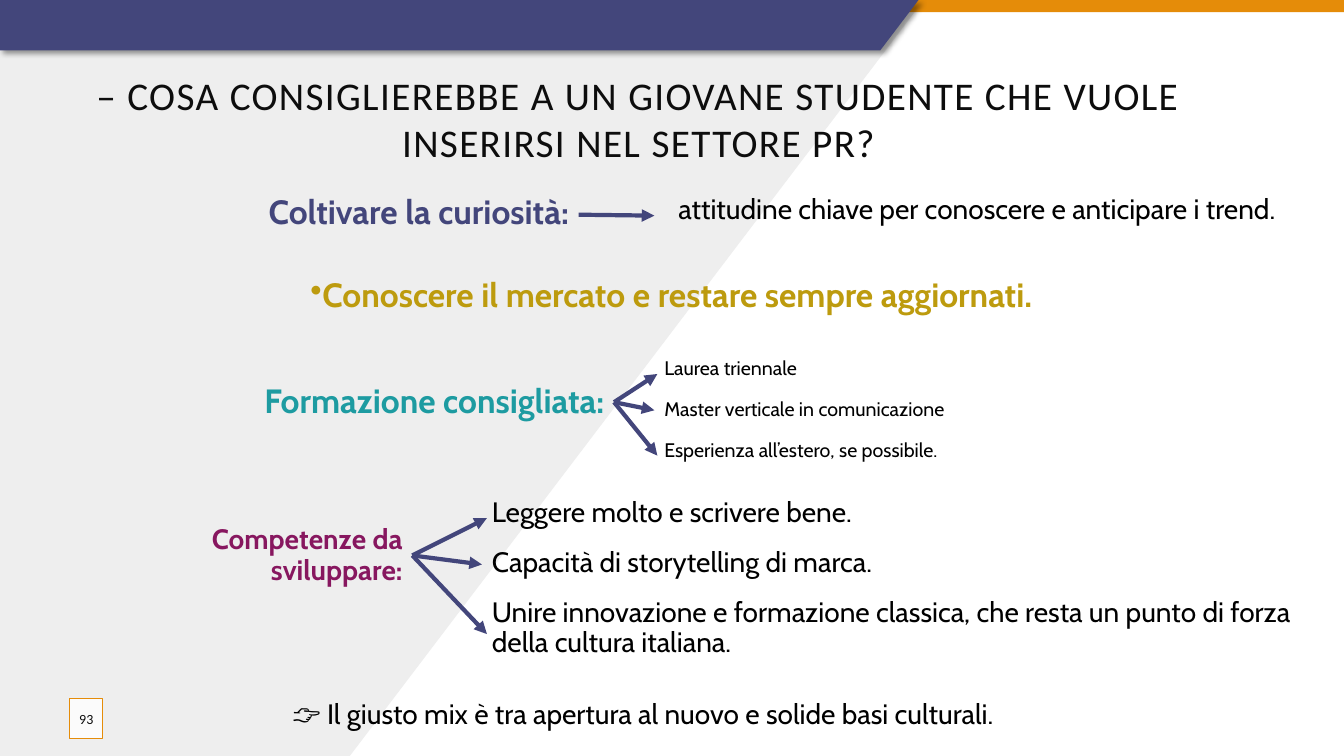
from lxml.etree import SubElement as Sub
from pptx import Presentation
from pptx.dml.color import RGBColor as RGB
from pptx.enum.shapes import MSO_CONNECTOR as Conn, MSO_SHAPE as Kind
from pptx.enum.text import MSO_ANCHOR as Anchor, PP_ALIGN as Align
from pptx.oxml.ns import qn
from pptx.util import Inches, Pt

WIDE, HIGH = Inches(13.33), Inches(7.5)
HUES = {
    "paper": "FFFFFF", "grey": "EEEEEE", "orange": "E58C09", "navy": "43467B",
    "ink": "0D0D0D", "black": "000000", "teal": "1D9BA1", "plum": "87175F",
    "gold": "BD9B0E",
}
BODY = {"line_spacing": 0.9, "space_after": Pt(2)}
HEAD = {**BODY, "alignment": Align.RIGHT}
MID = {"alignment": Align.CENTER}


def col(share):
    return round(WIDE * share / 100)


def row(share):
    return round(HIGH * share / 100)


def area(left, top, width, height):
    return col(left), row(top), col(width), row(height)


def apply(item, form):
    for name, value in form.items():
        setattr(item, name, value)


def paint(shape, hue):
    shape.shadow.inherit = False
    shape.fill.solid()
    shape.fill.fore_color.rgb = RGB.from_string(HUES[hue])
    shape.line.fill.background()
    return shape


def fade(tint, share):
    Sub(tint, qn("a:alpha"), val=str(share * 1000))


def block(slide, place, hue):
    return paint(slide.shapes.add_shape(Kind.RECTANGLE, *area(*place)), hue)


def panel(slide, dots, hue):
    spots = [(col(x), row(y)) for x, y in dots]
    pen = slide.shapes.build_freeform(*spots[0], scale=1.0)
    pen.add_line_segments(spots[1:], close=True)
    return paint(pen.convert_to_shape(), hue)


def shade(shape):
    glow = Sub(shape.element.spPr.find(qn("a:effectLst")), qn("a:outerShdw"),
               blurRad=str(Pt(4)), dist=str(Pt(3)), dir="2700000",
               algn="tl", rotWithShape="0")
    fade(Sub(glow, qn("a:srgbClr"), val=HUES["black"]), 40)


def write(frame, lines, hue, size, form, face="Cabin", bold=False, dot=False):
    frame.word_wrap = True
    for rank, line in enumerate(lines):
        para = frame.add_paragraph() if rank else frame.paragraphs[0]
        para.text = line
        apply(para, form)
        if rank:
            para.space_before = Pt(12)
        if dot:
            Sub(para._p.get_or_add_pPr(), qn("a:buChar"), char="•")
        apply(para.font, {"name": face, "size": Pt(size), "bold": bold})
        para.font.color.rgb = RGB.from_string(HUES[hue])


def label(slide, place, lines, hue, size, form, anchor=Anchor.MIDDLE, **extra):
    box = slide.shapes.add_textbox(*area(*place))
    box.text_frame.vertical_anchor = anchor
    write(box.text_frame, lines, hue, size, form, **extra)
    return box


def arrows(slide, start, ends):
    for end in ends:
        line = slide.shapes.add_connector(
            Conn.STRAIGHT, col(start[0]), row(start[1]), col(end[0]), row(end[1]))
        line.line.width = Pt(3)
        line.line.color.rgb = RGB.from_string(HUES["navy"])
        Sub(line.line._get_or_add_ln(), qn("a:tailEnd"), type="triangle")
        Sub(line._element.spPr, qn("a:effectLst"))


def badge(slide, place, text):
    box = block(slide, place, "paper")
    fade(box.element.spPr.find(qn("a:solidFill"))[0], 82)
    box.line.color.rgb = RGB.from_string(HUES["orange"])
    box.line.width = Pt(0.75)
    apply(box.text_frame, {"margin_left": 0, "margin_right": 0,
                           "vertical_anchor": Anchor.MIDDLE})
    write(box.text_frame, [text], "ink", 10, MID, face="Calibri")


def frame(slide):
    panel(slide, [(0, 0), (68.34, 0), (68.34, 0.93), (26.03, 100), (0, 100)], "grey")
    block(slide, (0, 0, 100, 1.6), "orange")
    shade(panel(slide, [(0, 0), (68.34, 0), (65.49, 6.67), (0, 6.67)], "navy"))
    title = label(
        slide, (1.05, 8.8, 92.95, 6.8),
        ["– COSA CONSIGLIEREBBE A UN GIOVANE STUDENTE CHE VUOLE INSERIRSI NEL SETTORE PR?"],
        "ink", 28, MID, Anchor.TOP, face="Calibri")
    for run in title.text_frame.paragraphs[0].runs:
        run._r.get_or_add_rPr().set("spc", "100")
    badge(slide, (5.18, 92.4, 2.48, 5.33), "93")


def main():
    deck = Presentation()
    apply(deck, {"slide_width": WIDE, "slide_height": HIGH})
    slide = deck.slides.add_slide(deck.slide_layouts[6])
    frame(slide)

    label(slide, (2.55, 25.2, 40.51, 6.13), ["Coltivare la curiosità:"],
          "navy", 24, HEAD, bold=True)
    label(slide, (49.74, 19.87, 48.31, 15.87),
          ["attitudine chiave per conoscere e anticipare i trend."], "black", 20, BODY)
    arrows(slide, (43.06, 28.4), [(48.69, 28.53)])

    label(slide, (22.36, 35.6, 63.54, 6.67),
          ["Conoscere il mercato e restare sempre aggiornati."],
          "gold", 24, {}, Anchor.TOP, bold=True, dot=True)

    label(slide, (5.18, 49.47, 40.51, 7.6), ["Formazione consigliata:"],
          "teal", 24, HEAD, bold=True)
    label(slide, (48.69, 47.6, 44.26, 13.33),
          ["Laurea triennale", "Master verticale in comunicazione",
           "Esperienza all’estero, se possibile."], "black", 14, BODY)
    arrows(slide, (45.69, 53.2), [(48.91, 49.47), (48.69, 54.27), (48.91, 60.27)])

    label(slide, (5.18, 70.27, 25.51, 6.53), ["Competenze da sviluppare:"],
          "plum", 20, HEAD, bold=True)
    label(slide, (35.86, 68.8, 62.27, 15.47),
          ["Leggere molto e scrivere bene.", "Capacità di storytelling di marca.",
           "Unire innovazione e formazione classica, che resta un punto di forza "
           "della cultura italiana."], "black", 20, BODY)
    arrows(slide, (30.68, 73.47), [(36.23, 68.53), (35.86, 74.67), (36.23, 83.87)])

    label(slide, (21.01, 91.47, 62.27, 5.87),
          ["👉 Il giusto mix è tra apertura al nuovo e solide basi culturali."],
          "black", 20, {}, Anchor.TOP)
    deck.save("out.pptx")


if __name__ == "__main__":
    main()
